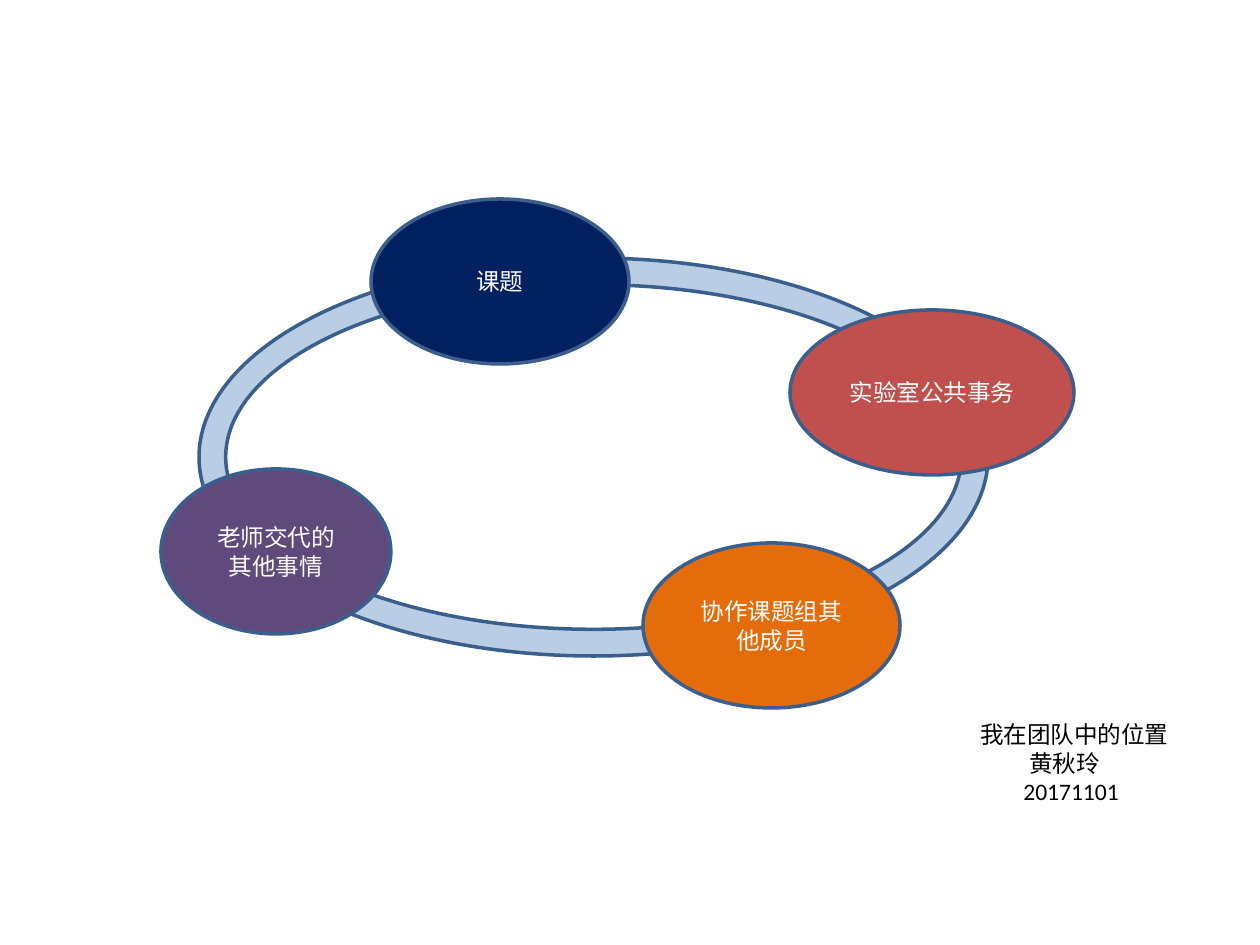
from pptx import Presentation
from pptx import util as u
from pptx.dml.color import RGBColor
from pptx.enum import shapes, text

PX = u.Inches(1) // 126
FONT, SIZE = "Calibri", 13.5
OUTLINE, RING_FILL = "3A5F8C", "B9CDE5"
RING = (199, 258, 789, 398)
RING_THICKNESS = 0.067
NODE_HEIGHT = 165

# label, left, top, width, fill
NODES = [
    ("课题", 371, 199, 258, "002060"),
    ("实验室公共事务", 790, 310, 284, "C0504D"),
    ("老师交代的其他事情", 161, 469, 230, "604A7B"),
    ("协作课题组其他成员", 643, 543, 257, "E46C0A"),
]
# line, left indent
CAPTION = [("我在团队中的位置", 0), ("黄秋玲", 49), ("20171101", 43)]
CAPTION_BOX = (968, 714, 234, 98)


def color(value):
    return RGBColor.from_string(value)


def px(*lengths):
    return [length * PX for length in lengths]


def write(para, words, ink="000000", align=text.PP_ALIGN.LEFT, indent=0):
    para.alignment = align
    if indent:
        para._p.get_or_add_pPr().set("marL", str(indent * PX))
    span = para.add_run()
    span.text = words
    span.font.name = FONT
    span.font.size = u.Pt(SIZE)
    span.font.color.rgb = color(ink)


def add_outlined(page, kind, place, fill):
    shape = page.shapes.add_shape(kind, *px(*place))
    shape.shadow.inherit = False
    shape.fill.solid()
    shape.fill.fore_color.rgb = color(fill)
    shape.line.color.rgb = color(OUTLINE)
    shape.line.width = u.Pt(2)
    return shape


def main():
    deck = Presentation()
    deck.slide_width, deck.slide_height = u.Inches(10), u.Inches(7.5)
    page = deck.slides.add_slide(deck.slide_layouts[6])

    # Caption
    box = page.shapes.add_textbox(*px(*CAPTION_BOX))
    frame = box.text_frame
    frame.word_wrap = True
    for index, (line, indent) in enumerate(CAPTION):
        para = frame.add_paragraph() if index else frame.paragraphs[0]
        write(para, line, indent=indent)

    # Ring behind the nodes
    ring = add_outlined(page, shapes.MSO_SHAPE.DONUT, RING, RING_FILL)
    ring.adjustments[0] = RING_THICKNESS

    # Nodes
    for label, left, top, width, fill in NODES:
        place = (left, top, width, NODE_HEIGHT)
        node = add_outlined(page, shapes.MSO_SHAPE.OVAL, place, fill)
        node.text_frame.word_wrap = True
        node.text_frame.vertical_anchor = text.MSO_ANCHOR.MIDDLE
        write(node.text_frame.paragraphs[0], label, ink="FFFFFF",
              align=text.PP_ALIGN.CENTER)

    deck.save("out.pptx")


if __name__ == "__main__":
    main()
